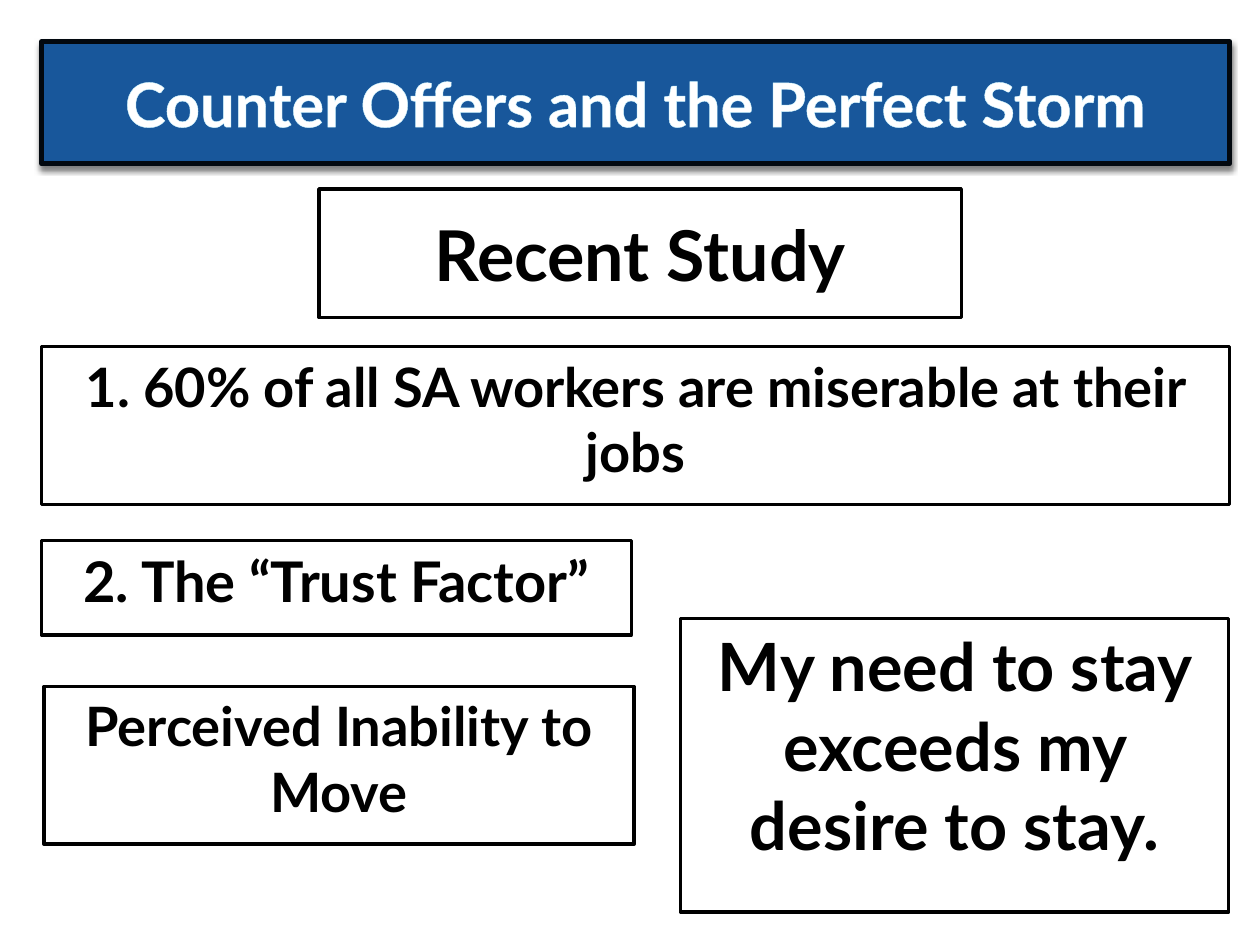
from lxml.etree import SubElement, fromstring
from pptx import Presentation
from pptx.dml.color import RGBColor
from pptx.enum.shapes import MSO_SHAPE
from pptx.enum.text import MSO_ANCHOR, MSO_AUTO_SIZE, PP_ALIGN
from pptx.oxml.ns import nsdecls, qn
from pptx.util import Cm, Pt

FONT = "Lato"
COLOURS = {
    "banner": "18579B",
    "banner_edge": "02080F",
    "banner_text": "FFFFFF",
    "letter_edge": "CCF2FD",
    "panel": "FFFFFF",
    "ink": "000000",
}
MARGIN = 0.84
FULL_WIDTH = 23.95
HALF_WIDTH = 11.89


def colour(key):
    return RGBColor.from_string(COLOURS[key])


def style_panel(panel, fill, edge, edge_width):
    panel.fill.solid()
    panel.fill.fore_color.rgb = colour(fill)
    panel.line.color.rgb = colour(edge)
    panel.line.width = Pt(edge_width)


def write_centred(panel, wording, size, ink, anchor):
    frame = panel.text_frame
    frame.text = wording
    frame.word_wrap = True
    frame.auto_size = MSO_AUTO_SIZE.NONE
    frame.vertical_anchor = anchor
    paragraph = frame.paragraphs[0]
    paragraph.alignment = PP_ALIGN.CENTER
    font = paragraph.runs[0].font
    font.name = FONT
    font.size = Pt(size)
    font.bold = True
    font.color.rgb = colour(ink)


def add_drop_shadow(panel):
    effects = SubElement(panel._element.spPr, qn("a:effectLst"))
    effects.append(fromstring(
        f'<a:outerShdw {nsdecls("a")} blurRad="{Pt(3)}" dist="{Pt(2)}" '
        f'dir="5400000" rotWithShape="0"><a:srgbClr val="{COLOURS["ink"]}">'
        '<a:alpha val="50000"/></a:srgbClr></a:outerShdw>'))


def outline_letters(run):
    run._r.get_or_add_rPr().insert(0, fromstring(
        f'<a:ln {nsdecls("a")} w="{Pt(1)}"><a:solidFill>'
        f'<a:srgbClr val="{COLOURS["letter_edge"]}"/></a:solidFill></a:ln>'))


def place_title(slide, box, wording):
    banner = slide.shapes.title
    banner.left, banner.top, banner.width, banner.height = map(Cm, box)
    style_panel(banner, "banner", "banner_edge", 3)
    add_drop_shadow(banner)
    write_centred(banner, wording, 35, "banner_text", MSO_ANCHOR.MIDDLE)
    outline_letters(banner.text_frame.paragraphs[0].runs[0])


def place_statement(slide, box, wording, size, anchor=MSO_ANCHOR.TOP):
    statement = slide.shapes.add_shape(MSO_SHAPE.RECTANGLE, *map(Cm, box))
    style_panel(statement, "panel", "ink", 2)
    statement.shadow.inherit = False
    write_centred(statement, wording, size, "ink", anchor)


def main():
    deck = Presentation()
    deck.slide_width, deck.slide_height = Cm(25.4), Cm(19.05)
    slide = deck.slides.add_slide(deck.slide_layouts[5])

    place_title(slide, (MARGIN, 0.84, FULL_WIDTH, 2.46),
                "Counter Offers and the Perfect Storm")
    place_statement(slide, (6.43, 3.81, 12.95, 2.59), "Recent Study", 40,
                    MSO_ANCHOR.MIDDLE)
    findings = [
        ((MARGIN, 6.99, FULL_WIDTH, 3.18),
         "1. 60% of all SA workers are miserable at their jobs", 31),
        ((MARGIN, 10.9, HALF_WIDTH, 1.9), "2. The “Trust Factor”", 32),
        ((0.89, 13.84, HALF_WIDTH, 3.18), "Perceived Inability to Move", 31),
        ((13.72, 12.47, 11.05, 5.92),
         "My need to stay exceeds my desire to stay.", 38),
    ]
    for box, wording, size in findings:
        place_statement(slide, box, wording, size)

    deck.save("out.pptx")


if __name__ == "__main__":
    main()
